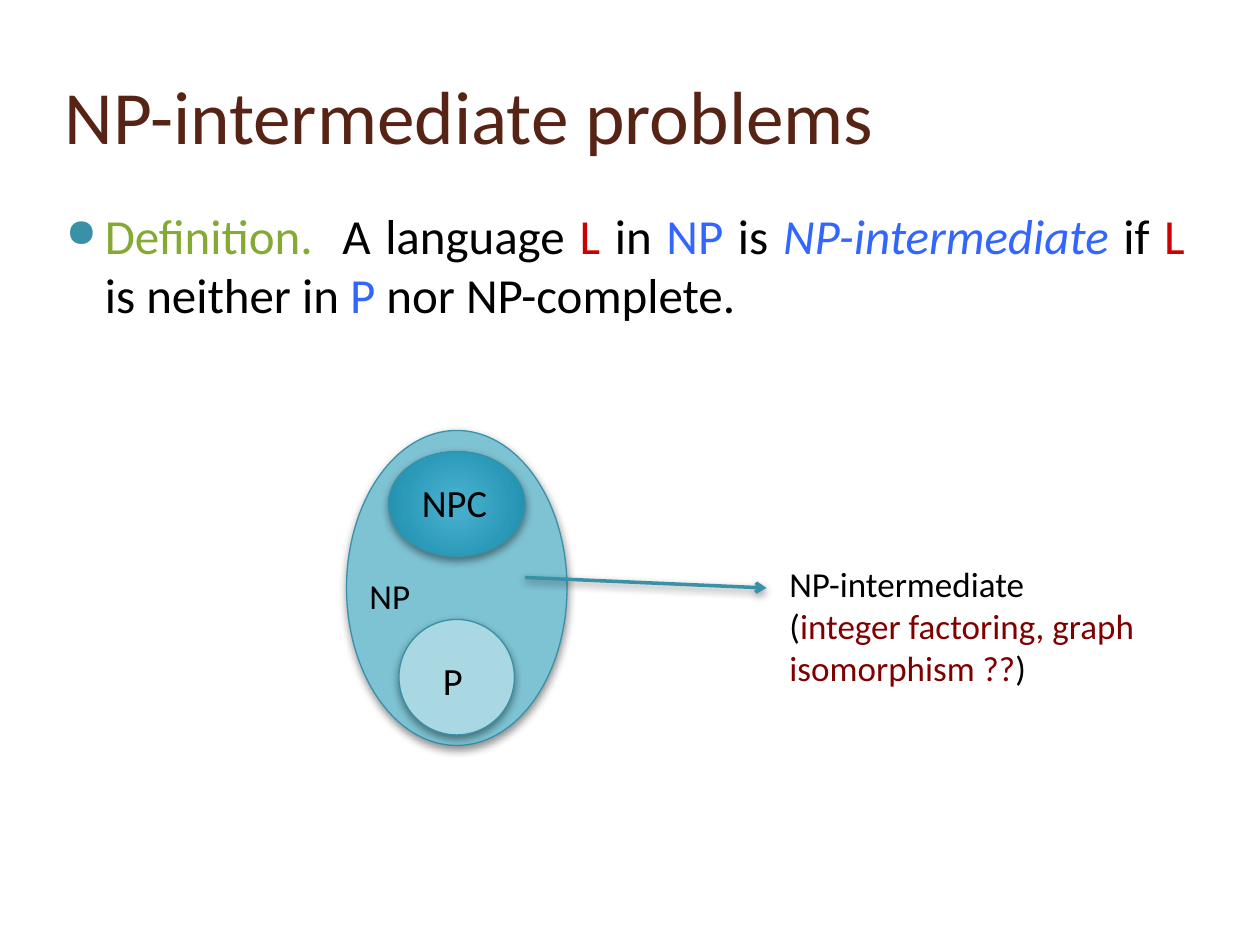
import pptx
import pptx.dml.color
import pptx.enum.shapes
import pptx.enum.text
import pptx.oxml
import pptx.oxml.ns
import pptx.util

Pt = pptx.util.Pt
ALIGN = pptx.enum.text.PP_ALIGN
ANCHOR = pptx.enum.text.MSO_ANCHOR
NS = pptx.oxml.ns.nsdecls("a")
TEAL, BLACK, BLUE, RED = "3891A7", "000000", "3366FF", "CC0000"
STOPS = [(0, "45ACCC"), (15, "45ACCB"), (62, "2B9AB9"), (97, "1C8AA7"), (100, "0E89A7")]


def color(code):
    return pptx.dml.color.RGBColor.from_string(code)


def node(text):
    return pptx.oxml.parse_xml(text.replace(">", f" {NS}>", 1))


def apply(item, form):
    for name, value in form.items():
        setattr(item, name, value)


def shade(item):
    item._element.spPr.append(node(
        '<a:effectLst><a:outerShdw blurRad="63500" dist="25400" dir="5400000" rotWithShape="0">'
        '<a:srgbClr val="000000"><a:alpha val="43000"/></a:srgbClr>'
        '</a:outerShdw></a:effectLst>'))


def stroke(line, width):
    line.color.rgb = color(TEAL)
    line.width = Pt(width)


def add_oval(slide, box, fill):
    oval = slide.shapes.add_shape(pptx.enum.shapes.MSO_SHAPE.OVAL, *map(Pt, box))
    oval.fill.solid()
    oval.fill.fore_color.rgb = color(fill)
    stroke(oval.line, 0.75)
    shade(oval)
    return oval


def add_glow(oval):
    stops = "".join(f'<a:gs pos="{pos * 1000}"><a:srgbClr val="{code}"/></a:gs>'
                    for pos, code in STOPS)
    glow = node(f'<a:gradFill><a:gsLst>{stops}</a:gsLst><a:path path="circle">'
                '<a:fillToRect l="50000" t="50000" r="50000" b="50000"/></a:path></a:gradFill>')
    props = oval._element.spPr
    props.replace(props.find(pptx.oxml.ns.qn("a:solidFill")), glow)


def add_text(slide, box, size, paras, **form):
    frame = slide.shapes.add_textbox(*map(Pt, box)).text_frame
    apply(frame, {"word_wrap": True, **form})
    for num, runs in enumerate(paras):
        para = frame.add_paragraph() if num else frame.paragraphs[0]
        for text, code, *slant in runs:
            run = para.add_run()
            run.text = text
            apply(run.font, {"name": "Calibri", "size": Pt(size), "italic": bool(slant)})
            run.font.color.rgb = color(code)
    return frame


def add_bullet(para):
    apply(para, {"alignment": ALIGN.JUSTIFY, "space_before": Pt(6)})
    props = para._p.get_or_add_pPr()
    props.set("marL", str(Pt(28.8)))
    props.set("indent", str(Pt(-22.3)))
    for part in (f'<a:buClr><a:srgbClr val="{TEAL}"/></a:buClr>',
                 '<a:buSzPct val="80000"></a:buSzPct>',
                 '<a:buChar char="●"></a:buChar>'):
        props.append(node(part))


def add_arrow(slide, start, end):
    arrow = slide.shapes.add_connector(
        pptx.enum.shapes.MSO_CONNECTOR.STRAIGHT, *map(Pt, start + end))
    stroke(arrow.line, 2)
    arrow.line._get_or_add_ln().append(node('<a:tailEnd type="arrow"></a:tailEnd>'))
    shade(arrow)


def main():
    deck = pptx.Presentation()
    apply(deck, {"slide_width": Pt(720), "slide_height": Pt(540)})
    slide = deck.slides.add_slide(deck.slide_layouts[6])

    add_text(slide, (30, 24, 610.5, 82.5), 43,
             [[("NP-intermediate problems", "572314")]], vertical_anchor=ANCHOR.MIDDLE)
    body = add_text(slide, (24, 114, 660, 378), 28, [[
        ("Definition.  ", "84AA33"), ("A language ", BLACK), ("L ", RED), ("in ", BLACK),
        ("NP ", BLUE), ("is ", BLACK), ("NP-intermediate ", BLUE, "italic"), ("if ", BLACK),
        ("L ", RED), ("is neither in ", BLACK), ("P ", BLUE), ("nor NP-complete. ", BLACK)]])
    add_bullet(body.paragraphs[0])

    add_oval(slide, (198, 246, 126, 180), "7EC3D4")
    add_oval(slide, (228, 354, 66, 66), "A9D7E2")
    add_glow(add_oval(slide, (222, 258, 78, 60), "2B9AB9"))

    for label, box, size in (("P", (246, 372, 36, 34), 22),
                             ("NPC", (234, 270, 60, 34), 22),
                             ("NP", (204, 324.5, 54, 31.5), 20)):
        add_text(slide, box, size, [[(label, BLACK)]])

    add_arrow(slide, (300, 330), (438, 336))
    add_text(slide, (444, 318, 234, 80), 20, [
        [("NP-intermediate", BLACK)],
        [("(", BLACK), ("integer factoring, graph isomorphism ??", "800000"), (")", BLACK)]])
    deck.save("out.pptx")


if __name__ == "__main__":
    main()
